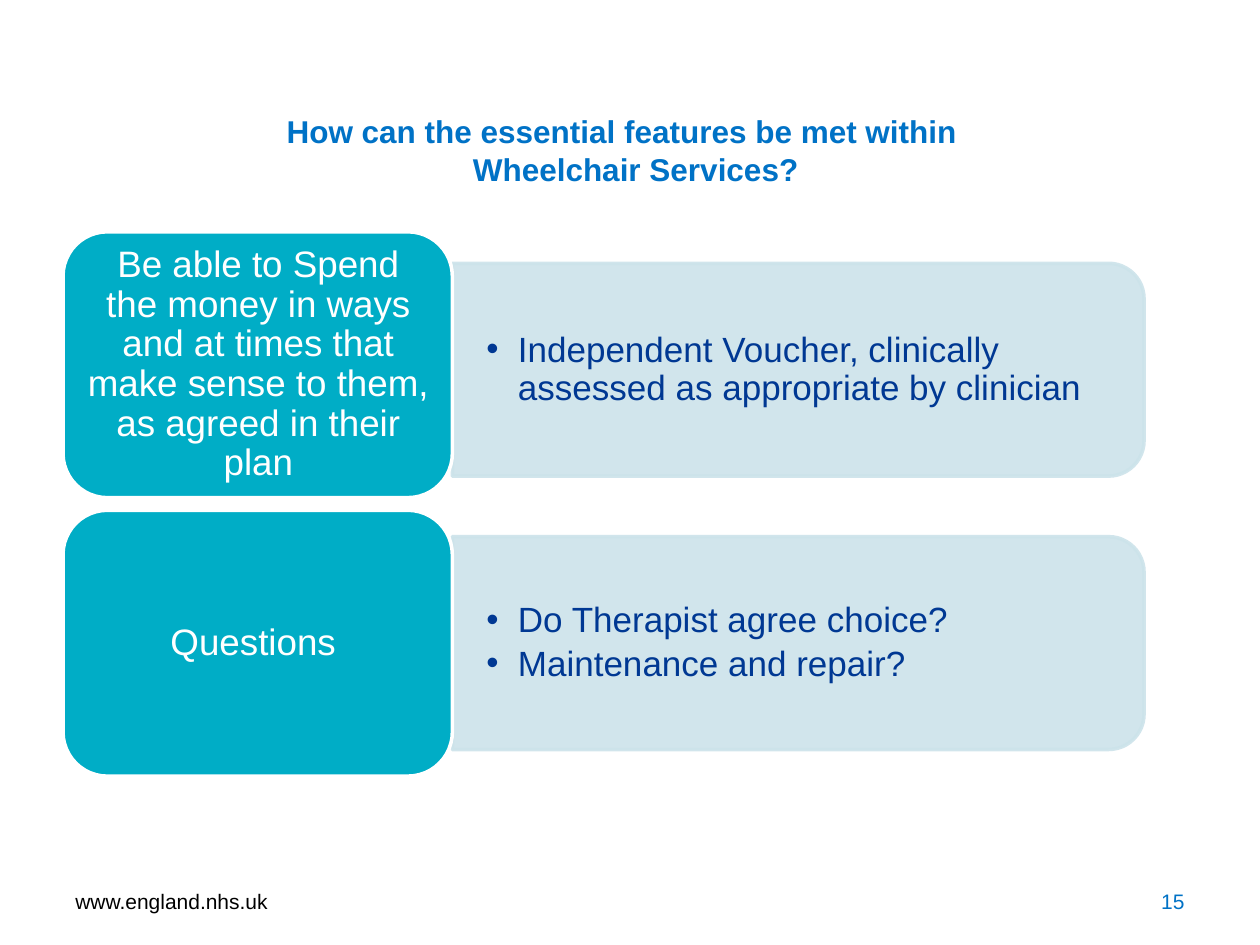
"""Build the slide on meeting essential features within Wheelchair Services."""
from dataclasses import dataclass

from lxml import etree
from pptx import Presentation
from pptx import util as u
from pptx.dml.color import RGBColor
from pptx.enum import shapes, text
from pptx.oxml.ns import qn

WIDTH, HEIGHT = u.Inches(10), u.Inches(7.5)
BLUE = RGBColor(0x00, 0x72, 0xC6)
NAVY = RGBColor(0x00, 0x38, 0x93)
TEAL = RGBColor(0x00, 0xAD, 0xC6)
PALE = RGBColor(0xCC, 0xE3, 0xEA)
WHITE = RGBColor(0xFF, 0xFF, 0xFF)
BLACK = RGBColor(0x00, 0x00, 0x00)

LEFT, CARD_WIDTH = 5, 30.9
CARD_TOP, CARD_HEIGHT, CARD_STEP = 24.53, 28.13, 29.47
PANEL_LEFT = LEFT + CARD_WIDTH
PANEL_WIDTH, PANEL_HEIGHT = 54.9, 22.53
PANEL_MIDDLE, PANEL_STEP = 39.13, 28.93
LIST_WIDTH, LIST_HEIGHT = 54.1, 20.27
FOOTER_TOP, FOOTER_WIDTH, FOOTER_HEIGHT = 92.67, 23.3, 5.33


@dataclass(frozen=True)
class Row:
    """A heading card with the points beside it."""
    heading: str
    points: tuple[str, ...]


ROWS = (
    Row("Be able to Spend the money in ways and at times that make sense to them, "
        "as agreed in their plan",
        ("Independent Voucher, clinically assessed as appropriate by clinician",)),
    Row("Questions ", ("Do Therapist agree choice?", "Maintenance and repair?")),
)


def area(left: float, top: float, width: float, height: float) -> tuple[int, ...]:
    """Turn percentages of the slide into lengths."""
    return (round(WIDTH * left / 100), round(HEIGHT * top / 100),
            round(WIDTH * width / 100), round(HEIGHT * height / 100))


def place(box, bounds: tuple[int, ...]) -> None:
    """Move and size a box."""
    box.left, box.top, box.width, box.height = bounds


def indent(para, left: float, first: float = 0) -> None:
    """Set a paragraph's left margin and first-line indent in inches."""
    props = para._p.get_or_add_pPr()
    props.set("marL", str(u.Inches(left)))
    props.set("indent", str(u.Inches(first)))


def write(box, *lines: str, size: float, color: RGBColor, bold: bool = False,
          align=text.PP_ALIGN.LEFT, spacing: float = 1, after: float = 0,
          insets: tuple[float, ...] = (0.1, 0.05, 0.1, 0.05),
          bullet: bool = False) -> None:
    """Fill a box with formatted paragraphs."""
    frame = box.text_frame
    frame.word_wrap = True
    frame.auto_size = text.MSO_AUTO_SIZE.NONE
    frame.vertical_anchor = text.MSO_ANCHOR.MIDDLE
    (frame.margin_left, frame.margin_top,
     frame.margin_right, frame.margin_bottom) = map(u.Inches, insets)
    frame.text = "\n".join(lines)
    for para in frame.paragraphs:
        para.alignment = align
        para.line_spacing = spacing
        para.space_before, para.space_after = u.Pt(0), u.Pt(after)
        if bullet:
            indent(para, 0.25, -0.25)
            etree.SubElement(para._p.pPr, qn("a:buChar")).set("char", "•")
        for span in para.runs:
            span.font.name, span.font.size = "Arial", u.Pt(size)
            span.font.bold, span.font.color.rgb = bold, color


def add_block(page, kind, bounds: tuple[int, ...], fill: RGBColor, line: RGBColor):
    """Add a filled and outlined shape without a shadow."""
    block = page.shapes.add_shape(kind, *bounds)
    block.shadow.inherit = False
    block.fill.solid()
    block.fill.fore_color.rgb = fill
    block.line.color.rgb = line
    block.line.width = u.Pt(2)
    return block


def add_panel(page, middle: float) -> None:
    """Add a translucent panel rounded at its right end."""
    left, top, width, height = area(PANEL_LEFT, middle - PANEL_HEIGHT / 2,
                                    PANEL_WIDTH, PANEL_HEIGHT)
    shift = (width - height) // 2
    panel = add_block(page, shapes.MSO_SHAPE.ROUND_2_SAME_RECTANGLE,
                      (left + shift, top - shift, height, width), PALE, PALE)
    panel.rotation = 90
    for color in panel._element.spPr.iter(qn("a:srgbClr")):
        etree.SubElement(color, qn("a:alpha")).set("val", "90000")


def add_row(page, index: int, row: Row, listing) -> None:
    """Draw one panel, its list and its heading card."""
    middle = PANEL_MIDDLE + index * PANEL_STEP
    add_panel(page, middle)
    place(listing, area(PANEL_LEFT, middle - LIST_HEIGHT / 2, LIST_WIDTH, LIST_HEIGHT))
    write(listing, *row.points, size=20, color=NAVY, spacing=0.9, after=3,
          insets=(0.27, 0.14, 0.27, 0.14), bullet=True)
    page.shapes._spTree.append(listing._element)
    card = add_block(page, shapes.MSO_SHAPE.ROUNDED_RECTANGLE,
                     area(LEFT, CARD_TOP + index * CARD_STEP, CARD_WIDTH, CARD_HEIGHT),
                     TEAL, WHITE)
    write(card, row.heading, size=21, color=WHITE, align=text.PP_ALIGN.CENTER,
          spacing=0.9, insets=(0.09, 0.04, 0.08, 0.04))


def add_footer(page, left: float, label: str, color: RGBColor, align) -> None:
    """Add a small label at the foot of the slide."""
    box = page.shapes.add_textbox(*area(left, FOOTER_TOP, FOOTER_WIDTH, FOOTER_HEIGHT))
    write(box, label, size=12, color=color, align=align)


def main() -> None:
    """Build and save the deck."""
    deck = Presentation()
    deck.slide_width, deck.slide_height = WIDTH, HEIGHT
    page = deck.slides.add_slide(deck.slide_layouts[3])
    title, *listings = page.placeholders
    add_footer(page, LEFT, "www.england.nhs.uk", BLACK, text.PP_ALIGN.LEFT)
    for index, (row, listing) in enumerate(zip(ROWS, listings)):
        add_row(page, index, row, listing)
    add_footer(page, 100 - LEFT - FOOTER_WIDTH, "15", BLUE, text.PP_ALIGN.RIGHT)
    place(title, area(LEFT, 11, 80.5, 9.73))
    write(title, "How can the essential features be met within", "Wheelchair Services?",
          size=18, color=BLUE, bold=True, align=text.PP_ALIGN.CENTER,
          insets=(0.92, 0.05, 0.1, 0.05))
    indent(title.text_frame.paragraphs[1], 0.22)
    deck.save("out.pptx")


if __name__ == "__main__":
    main()
